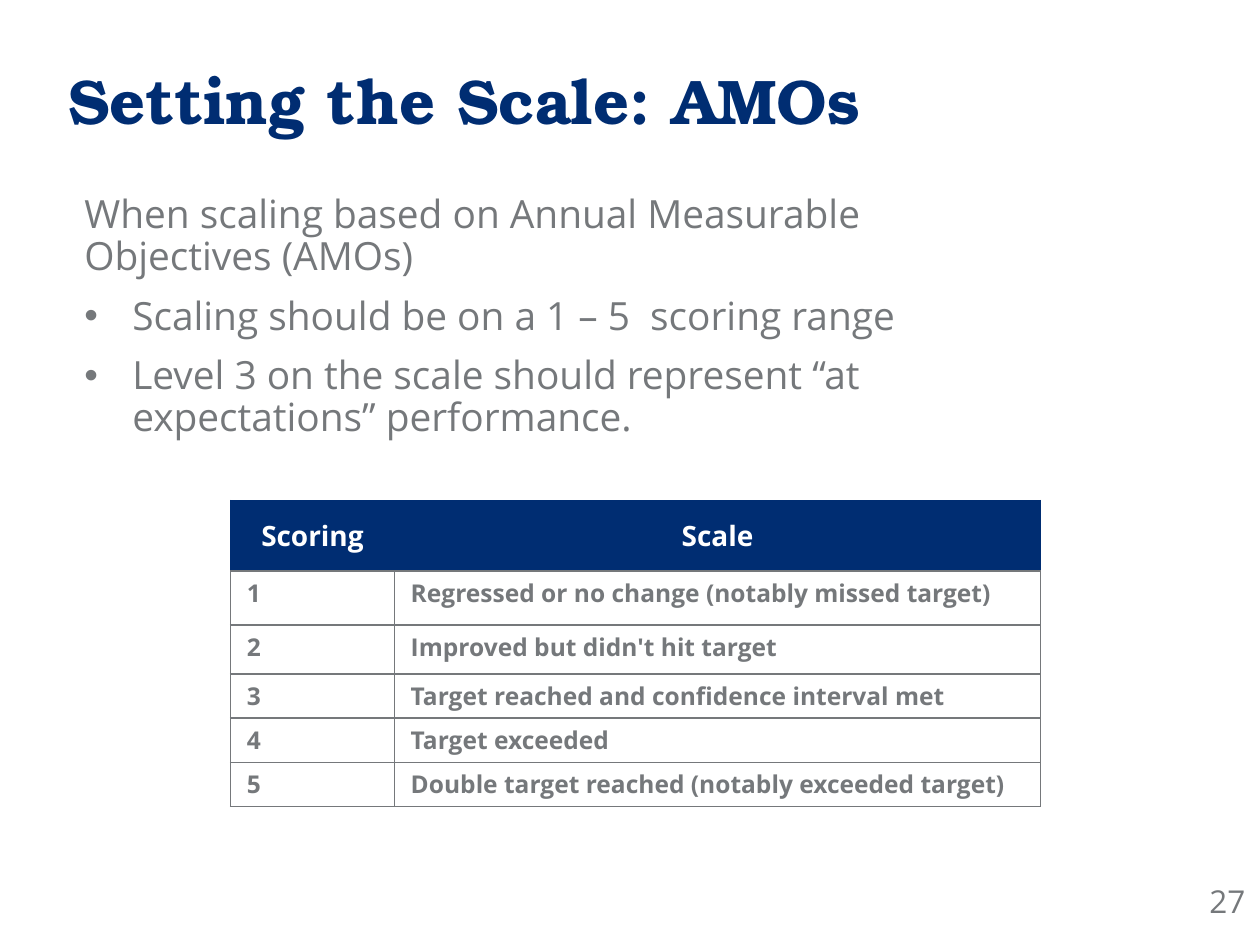
from lxml import etree
from pptx import Presentation
from pptx.dml.color import RGBColor
from pptx.enum.text import MSO_ANCHOR, MSO_AUTO_SIZE, PP_ALIGN
from pptx.oxml.ns import qn
from pptx.util import Inches, Pt

LEFT, CENTER = PP_ALIGN.LEFT, PP_ALIGN.CENTER
TOP, MIDDLE = MSO_ANCHOR.TOP, MSO_ANCHOR.MIDDLE
NO_FIT = MSO_AUTO_SIZE.NONE
COLORS = {"navy": "002D72", "gray": "75787B", "white": "FFFFFF"}
SANS, SERIF = "Open Sans", "TeX Gyre Bonum"


def add_run(para, text, size, color, bold=False, face=SANS):
    run = para.add_run()
    run.text = text
    font = run.font
    font.name, font.size, font.bold = face, Pt(size), bold
    font.color.rgb = RGBColor.from_string(COLORS[color])


def add_edge(cell, side, color, width):
    """Draw one cell border; side is L, R, T or B, no color means no line."""
    line = etree.SubElement(cell._tc.get_or_add_tcPr(), qn(f"a:ln{side}"), w=str(Pt(width)))
    if color:
        fill = etree.SubElement(line, qn("a:solidFill"))
        etree.SubElement(fill, qn("a:srgbClr"), val=COLORS[color])
    else:
        etree.SubElement(line, qn("a:noFill"))


prs = Presentation()
prs.slide_width, prs.slide_height = Inches(10), Inches(7.5)
slide = prs.slides.add_slide(prs.slide_layouts[1])

# Title
title = slide.shapes.title
title.left, title.top = Inches(0.44), Inches(0.15)
title.width, title.height = Inches(6.52), Inches(1.35)
frame = title.text_frame
frame.auto_size, frame.vertical_anchor = NO_FIT, MIDDLE
para = frame.paragraphs[0]
para.alignment, para.line_spacing = LEFT, 0.9
add_run(para, "Setting the Scale: AMOs", 36, "navy", True, SERIF)

# Intro and bullets
body = slide.placeholders[1]
body.left, body.top = Inches(0.57), Inches(1.5)
body.width, body.height = Inches(7.01), Inches(2.07)
frame = body.text_frame
frame.auto_size = NO_FIT
points = [
    "When scaling based on Annual Measurable Objectives (AMOs)",
    "Scaling should be on a 1 – 5  scoring range",
    "Level 3 on the scale should represent “at expectations” performance.",
]
for i, text in enumerate(points):
    para = frame.add_paragraph() if i else frame.paragraphs[0]
    props = para._p.get_or_add_pPr()
    indent = Inches(0.38) if i else 0
    props.set("marL", str(indent))
    props.set("indent", str(-indent))
    if i:
        etree.SubElement(props, qn("a:buChar"), char="•")
    else:
        etree.SubElement(props, qn("a:buNone"))
    para.line_spacing = 0.9
    para.space_before = Pt(10 if i else 0)
    add_run(para, text, 22.2, "gray")

# Page number
box = slide.shapes.add_textbox(Inches(9.5), Inches(6.95), Inches(0.5), Inches(0.4))
box.text_frame.word_wrap = True
add_run(box.text_frame.paragraphs[0], "27", 18, "gray")

# Scoring table
rows = [
    ("Scoring", "Scale"),
    ("1", "Regressed or no change (notably missed target)"),
    ("2", "Improved but didn't hit target"),
    ("3", "Target reached and confidence interval met"),
    ("4", "Target exceeded"),
    ("5", "Double target reached (notably exceeded target)"),
]
widths = [1.3, 5.13]
heights = [0.56, 0.43, 0.39, 0.35, 0.35, 0.35]
table = slide.shapes.add_table(
    len(rows), len(widths), Inches(1.83), Inches(3.97),
    Inches(sum(widths)), Inches(sum(heights))).table
for col, width in zip(table.columns, widths):
    col.width = Inches(width)
for row, height in zip(table.rows, heights):
    row.height = Inches(height)

for r, texts in enumerate(rows):
    head = r == 0
    for c, text in enumerate(texts):
        cell = table.cell(r, c)
        cell.margin_left = cell.margin_right = Inches(0.13)
        cell.margin_top = cell.margin_bottom = Inches(0.04)
        cell.vertical_anchor = MIDDLE if head else TOP
        para = cell.text_frame.paragraphs[0]
        para.alignment = CENTER if head else LEFT
        add_run(para, text, 16 if head else 14, "white" if head else "gray", True)
        inner = "R" if c == 0 else "L"
        for side in "LRTB":
            if head and side == inner:
                add_edge(cell, side, None, 0)
            elif head and side != "B":
                add_edge(cell, side, "navy", 0.5)
            else:
                add_edge(cell, side, "gray", 1)
        if head:
            cell.fill.solid()
            cell.fill.fore_color.rgb = RGBColor.from_string(COLORS["navy"])
        else:
            cell.fill.background()

prs.save("out.pptx")
